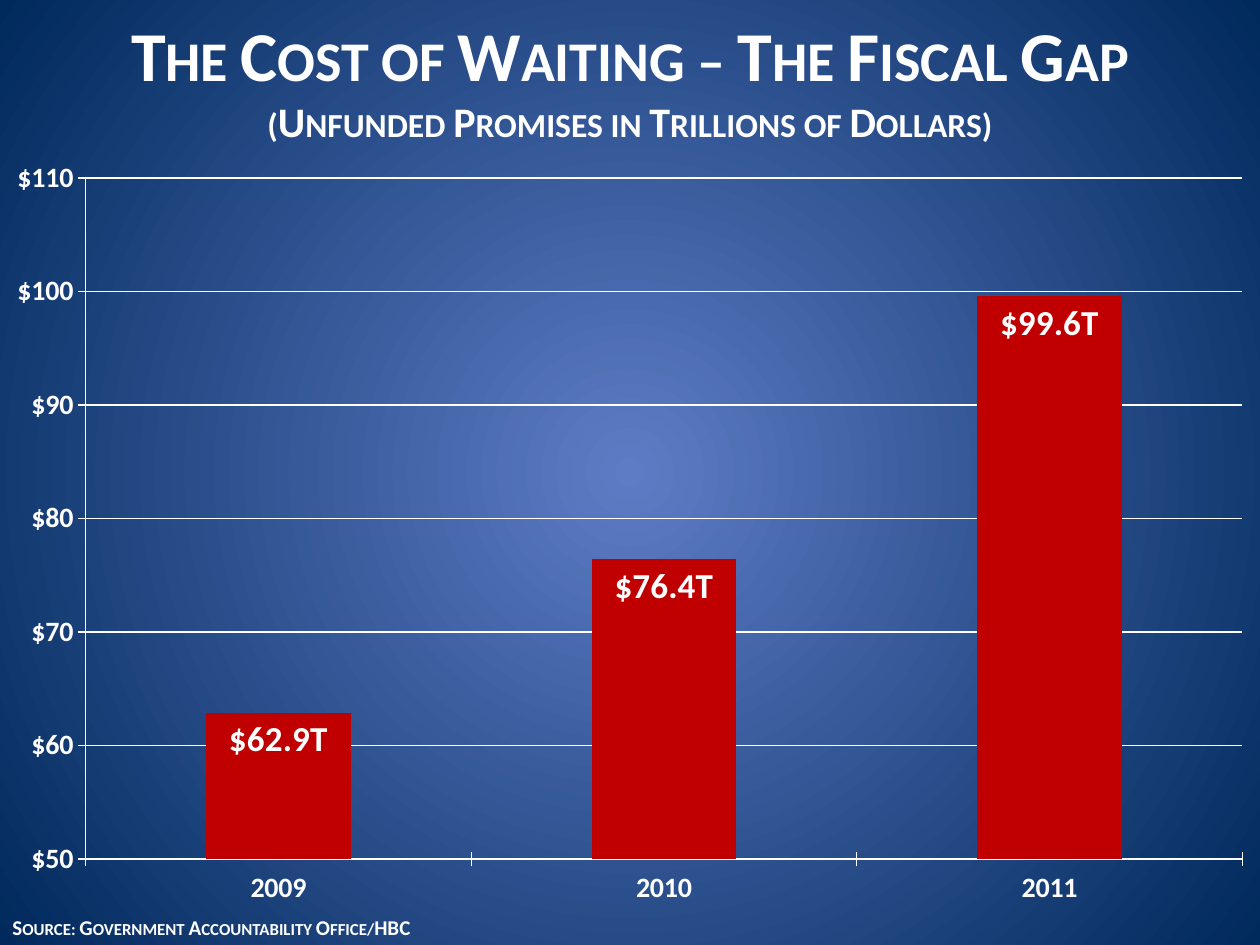
from lxml import etree
from pptx import Presentation
from pptx.chart.data import CategoryChartData
from pptx.dml.color import RGBColor
from pptx.enum.chart import XL_CHART_TYPE, XL_LABEL_POSITION, XL_TICK_MARK
from pptx.enum.text import MSO_ANCHOR, MSO_AUTO_SIZE, PP_ALIGN
from pptx.oxml import parse_xml
from pptx.oxml.ns import nsdecls, qn
from pptx.util import Inches, Pt

COLUMN = XL_CHART_TYPE.COLUMN_CLUSTERED
INSIDE_END = XL_LABEL_POSITION.INSIDE_END
CROSS = XL_TICK_MARK.CROSS
MIDDLE = MSO_ANCHOR.MIDDLE
CENTER = PP_ALIGN.CENTER
LEFT = PP_ALIGN.LEFT
GROW = MSO_AUTO_SIZE.SHAPE_TO_FIT_TEXT
NO_FIT = MSO_AUTO_SIZE.NONE

COLORS = {"text": "FFFFFF", "bar": "C00000", "glow": "5E7CC5", "edge": "00295C"}
FONT = "Calibri"


def rgb(name):
    return RGBColor.from_string(COLORS[name])


class FiscalSlide:
    def __init__(self, prs):
        self.s = prs.slides.add_slide(prs.slide_layouts[5])

    def style(self, font, size, bold=True):
        font.name, font.size, font.bold = FONT, Pt(size), bold
        font.color.rgb = rgb("text")

    def place(self, sp, left, top, width, height):
        sp.left, sp.top = Inches(left), Inches(top)
        sp.width, sp.height = Inches(width), Inches(height)

    def small_caps(self, p, sizes, align):
        """Format the runs of a paragraph, one size for each run."""
        p.alignment = align
        for r, size in zip(p.runs, sizes):
            self.style(r.font, size)
            r.font._element.set("cap", "small")

    def background(self):
        """Fill the slide with a gradient that spreads from its centre."""
        fill = self.s.background.fill
        fill.gradient()
        for stop, name, position in zip(fill.gradient_stops, ("glow", "edge"), (0, 1)):
            stop.color.rgb = rgb(name)
            stop.position = position
        grad = self.s._element.find(".//" + qn("a:gradFill"))
        grad.remove(grad.find(qn("a:lin")))
        circle = etree.SubElement(grad, qn("a:path"), {"path": "circle"})
        etree.SubElement(circle, qn("a:fillToRect"), dict.fromkeys("ltrb", "50000"))

    def title(self, lines, sizes, box):
        sp = self.s.shapes.title
        self.place(sp, *box)
        tf = sp.text_frame
        tf.text = "\v".join(lines)
        tf.vertical_anchor, tf.auto_size, tf.word_wrap = MIDDLE, NO_FIT, True
        self.small_caps(tf.paragraphs[0], sizes, CENTER)

    def text(self, text, size, box):
        tf = self.s.shapes.add_textbox(*map(Inches, box)).text_frame
        tf.text = text
        tf.word_wrap, tf.auto_size = True, GROW
        self.small_caps(tf.paragraphs[0], [size], LEFT)

    def line(self, line):
        line.color.rgb = rgb("text")
        line.width = Pt(0.75)

    def axis(self, axis):
        axis.major_tick_mark = CROSS
        self.style(axis.tick_labels.font, 16)
        self.line(axis.format.line)

    def plot_layout(self, chart, **fractions):
        """Fix the inner plot area as fractions of the chart."""
        area = chart._chartSpace.find(".//" + qn("c:plotArea"))
        for old in area.findall(qn("c:layout")):
            area.remove(old)
        modes = "".join(f'<c:{k}Mode val="edge"/>' for k in "xy")
        sizes = "".join(f'<c:{k} val="{v}"/>' for k, v in fractions.items())
        area.insert(0, parse_xml(
            f'<c:layout {nsdecls("c")}><c:manualLayout><c:layoutTarget val="inner"/>'
            f"{modes}{sizes}</c:manualLayout></c:layout>"))

    def column_chart(self, categories, values, box):
        data = CategoryChartData()
        data.categories = categories
        data.add_series("Series 1", values)
        chart = self.s.shapes.add_chart(COLUMN, *map(Inches, box), data).chart
        chart.has_title = chart.has_legend = False
        self.style(chart.font, 18, bold=False)
        self.plot_layout(chart, x=0.068, y=0.026, w=0.918, h=0.865)

        plot = chart.plots[0]
        plot.gap_width, plot.overlap = 167, -57
        plot.vary_by_categories = False
        fill = plot.series[0].format.fill
        fill.solid()
        fill.fore_color.rgb = rgb("bar")

        labels = plot.series[0].data_labels
        labels.show_value = True
        labels.number_format = '"$"0.0"T"'
        labels.number_format_is_linked = False
        labels.position = INSIDE_END
        self.style(labels.font, 20)

        self.axis(chart.category_axis)
        axis = chart.value_axis
        self.axis(axis)
        axis.minimum_scale, axis.maximum_scale, axis.major_unit = 50, 110, 10
        axis.tick_labels.number_format = '"$"#,##0'
        axis.tick_labels.number_format_is_linked = False
        axis.has_major_gridlines = True
        self.line(axis.major_gridlines.format.line)


def main():
    prs = Presentation()
    prs.slide_width, prs.slide_height = Inches(10), Inches(7.5)
    slide = FiscalSlide(prs)
    slide.background()
    slide.title(["The Cost of Waiting – The Fiscal Gap",
                 "(Unfunded Promises in Trillions of Dollars)"],
                [40, 24], (0, 0, 10, 1.25))
    slide.column_chart(["2009", "2010", "2011"], [62.9, 76.4, 99.6],
                       (0, 1.25, 10, 6.25))
    slide.text("Source: Government Accountability Office/HBC", 12,
               (0, 7.21, 10, 0.3))
    prs.save("out.pptx")


if __name__ == "__main__":
    main()
